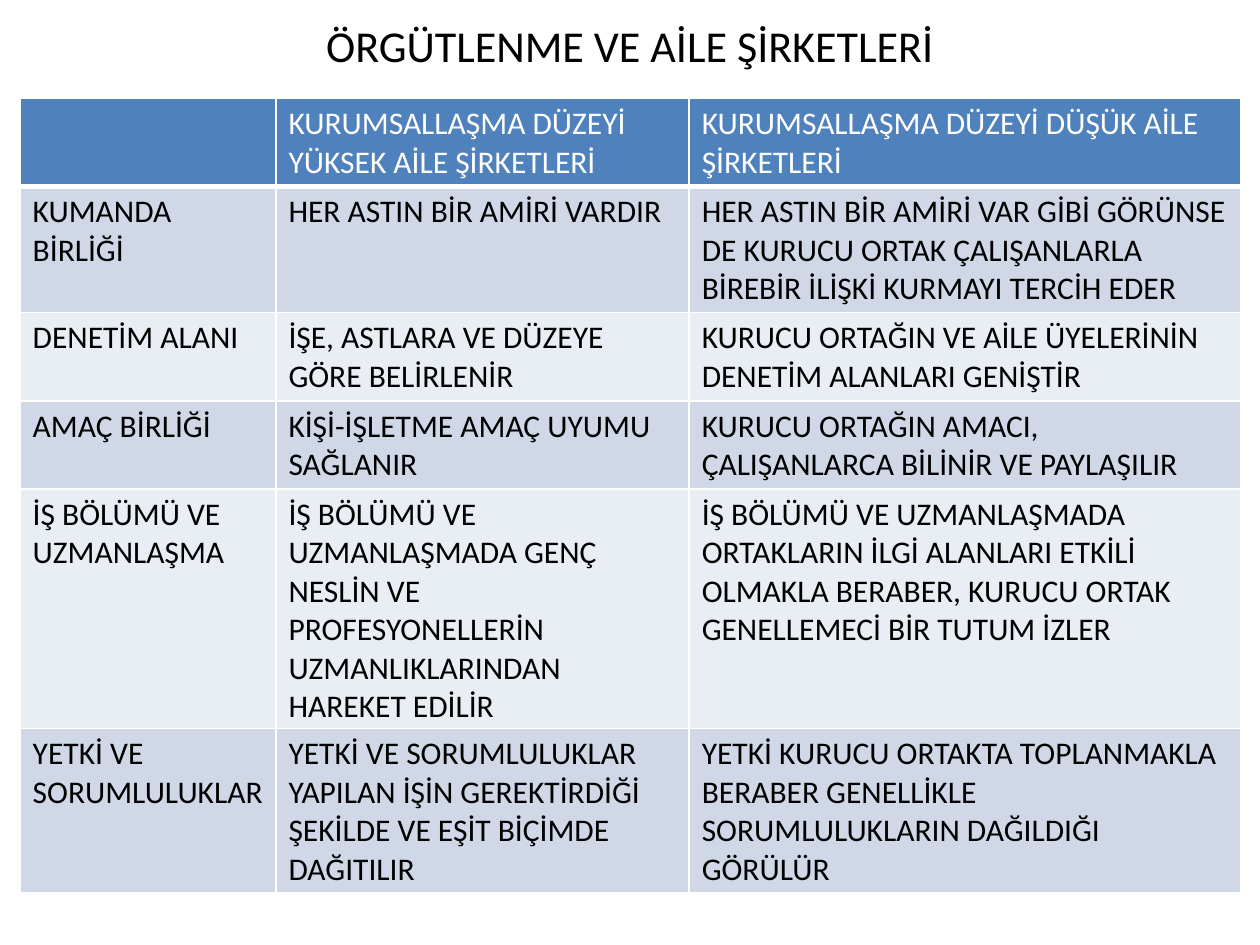
import pptx
import pptx.dml.color
import pptx.enum.text
import pptx.oxml
import pptx.oxml.ns
import pptx.util

TITLE = "ÖRGÜTLENME VE AİLE ŞİRKETLERİ"
COMPARISON = [
    ("", "KURUMSALLAŞMA DÜZEYİ YÜKSEK AİLE ŞİRKETLERİ",
     "KURUMSALLAŞMA DÜZEYİ DÜŞÜK AİLE ŞİRKETLERİ"),
    ("KUMANDA BİRLİĞİ", "HER ASTIN BİR AMİRİ VARDIR",
     "HER ASTIN BİR AMİRİ VAR GİBİ GÖRÜNSE DE KURUCU ORTAK ÇALIŞANLARLA "
     "BİREBİR İLİŞKİ KURMAYI TERCİH EDER"),
    ("DENETİM ALANI", "İŞE, ASTLARA VE DÜZEYE GÖRE BELİRLENİR",
     "KURUCU ORTAĞIN VE AİLE ÜYELERİNİN DENETİM ALANLARI GENİŞTİR"),
    ("AMAÇ BİRLİĞİ", "KİŞİ-İŞLETME AMAÇ UYUMU SAĞLANIR",
     "KURUCU ORTAĞIN AMACI, ÇALIŞANLARCA BİLİNİR VE PAYLAŞILIR"),
    ("İŞ BÖLÜMÜ VE UZMANLAŞMA",
     "İŞ BÖLÜMÜ VE UZMANLAŞMADA GENÇ NESLİN VE PROFESYONELLERİN "
     "UZMANLIKLARINDAN HAREKET EDİLİR",
     "İŞ BÖLÜMÜ VE UZMANLAŞMADA ORTAKLARIN İLGİ ALANLARI ETKİLİ OLMAKLA "
     "BERABER, KURUCU ORTAK GENELLEMECİ BİR TUTUM İZLER"),
    ("YETKİ VE SORUMLULUKLAR",
     "YETKİ VE SORUMLULUKLAR YAPILAN İŞİN GEREKTİRDİĞİ ŞEKİLDE VE EŞİT "
     "BİÇİMDE DAĞITILIR",
     "YETKİ KURUCU ORTAKTA TOPLANMAKLA BERABER GENELLİKLE "
     "SORUMLULUKLARIN DAĞILDIĞI GÖRÜLÜR"),
]


def color(value):
    return pptx.dml.color.RGBColor.from_string(value)


def write(frame, text, size=18, ink="000000", font="Calibri", align="LEFT"):
    paragraph = frame.paragraphs[0]
    paragraph.alignment = pptx.enum.text.PP_ALIGN[align]
    paragraph.font.size = pptx.util.Pt(size)
    if text:
        run = paragraph.add_run()
        run.text = text
        run.font.name = font
        run.font.size = pptx.util.Pt(size)
        run.font.bold = False
        run.font.color.rgb = color(ink)


class ComparisonSlide:
    """Holds the style and the current slide; lengths are shares of its size."""

    header = "4F81BD"
    bands = ("D0D8E8", "E9EDF4")
    light = "FFFFFF"

    def __init__(self, deck):
        self.width, self.height = deck.slide_width, deck.slide_height
        self.slide = deck.slides.add_slide(deck.slide_layouts[6])

    def box(self, left, top, width, height):
        return (int(left * self.width), int(top * self.height),
                int(width * self.width), int(height * self.height))

    def title(self, text, *place):
        heading = self.slide.shapes.add_textbox(*self.box(*place)).text_frame
        heading.word_wrap = True
        heading.vertical_anchor = pptx.enum.text.MSO_ANCHOR.MIDDLE
        write(heading, text, size=25.2, align="CENTER")

    def borders(self, cell, bottom):
        properties = cell._tc.get_or_add_tcPr()
        widths = {"lnL": 1, "lnR": 1, "lnT": 1, "lnB": bottom}
        for position, (side, points) in enumerate(widths.items()):
            properties.insert(position, pptx.oxml.parse_xml(
                f'<a:{side} {pptx.oxml.ns.nsdecls("a")} w="{pptx.util.Pt(points)}">'
                f'<a:solidFill><a:srgbClr val="{self.light}"/></a:solidFill></a:{side}>'))

    def table(self, rows, left, top, columns, row_height):
        place = self.box(left, top, sum(columns), row_height * len(rows))
        grid = self.slide.shapes.add_table(len(rows), len(columns), *place).table
        for column, share in zip(grid.columns, columns):
            column.width = int(share * self.width)
        for r, texts in enumerate(rows):
            heading = r == 0
            for c, text in enumerate(texts):
                cell = grid.cell(r, c)
                cell.fill.solid()
                cell.fill.fore_color.rgb = color(
                    self.header if heading else self.bands[(r - 1) % 2])
                self.borders(cell, bottom=3 if heading else 1)
                write(cell.text_frame, text, ink=self.light if heading else "000000")


def main():
    deck = pptx.Presentation()
    deck.slide_width = pptx.util.Inches(10)
    deck.slide_height = pptx.util.Inches(7.5)
    page = ComparisonSlide(deck)
    page.title(TITLE, 0.05, 0.16 / 7.5, 0.9, 0.39 / 7.5)
    page.table(COMPARISON, 0.016, 0.78 / 7.5, (0.203, 0.328, 0.438), 0.41 / 7.5)
    deck.save("out.pptx")


if __name__ == "__main__":
    main()
